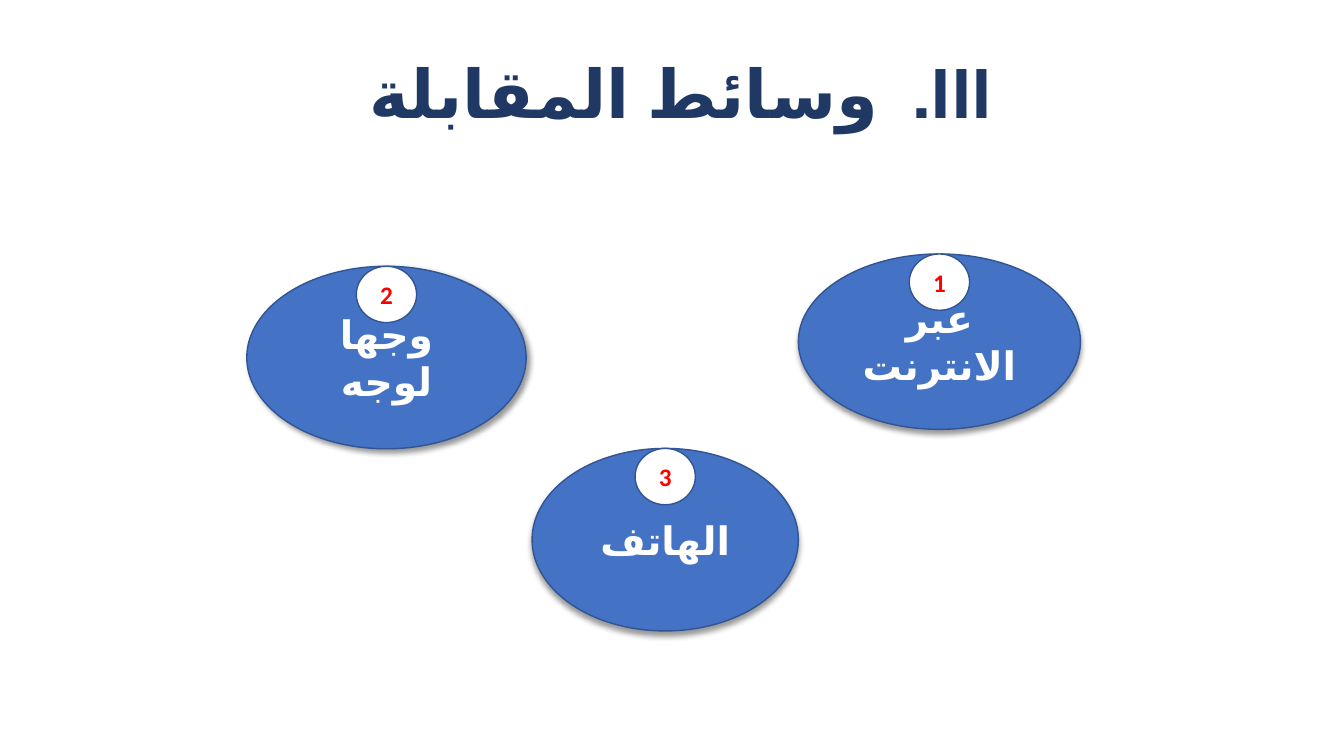
from dataclasses import dataclass

from lxml import etree
from pptx import Presentation
from pptx import util as u
from pptx.dml.color import RGBColor
from pptx.enum import lang, shapes, text
from pptx.oxml import ns


@dataclass(frozen=True)
class Theme:
    font: str = "Calibri"
    title: str = "203864"
    medium: str = "4472C4"
    outline: str = "325491"
    white: str = "FFFFFF"
    number: str = "FF0000"
    shadow: str = "000000"
    title_size: int = 48
    medium_size: int = 28
    number_size: int = 18


THEME = Theme()
BADGE_WIDTH, BADGE_HEIGHT = 1.52, 1.42

# Label, box in cm (left, top, width, height), shadow direction in degrees
MEDIA = [
    ("عبر الانترنت", (20.12, 6.4, 7.11, 4.42), 90),
    ("وجها لوجه", (6.22, 6.71, 7.04, 4.6), 45),
    ("الهاتف", (13.41, 11.3, 6.71, 4.6), 90),
]


def add_element(parent, tag, **attributes):
    child = etree.SubElement(parent, ns.qn(tag))
    for name, value in attributes.items():
        child.set(name, str(value))
    return child


def write(frame, words, size, color):
    """Fill a frame with one centred bold paragraph."""
    frame.word_wrap = True
    frame.vertical_anchor = text.MSO_ANCHOR.MIDDLE
    para = frame.paragraphs[0]
    para.text = words
    para.alignment = text.PP_ALIGN.CENTER
    for span in para.runs:
        span.font.name = THEME.font
        span.font.size = u.Pt(size)
        span.font.bold = True
        span.font.color.rgb = RGBColor.from_string(color)
        span.font.language_id = lang.MSO_LANGUAGE_ID.ARABIC_ALGERIA
    return para


def add_title(page, box):
    """Right-to-left title numbered with a Roman three."""
    title = page.shapes.title
    title.left, title.top, title.width, title.height = map(u.Cm, box)
    frame = title.text_frame
    frame.auto_size = text.MSO_AUTO_SIZE.NONE
    frame.margin_bottom = u.Cm(2)
    para = write(frame, "وسائط المقابلة", THEME.title_size, THEME.title)
    para.line_spacing = 0.9
    settings = para._p.get_or_add_pPr()
    indent = u.Cm(2.86)
    for name, value in (("marL", indent), ("indent", -indent), ("rtl", 1)):
        settings.set(name, str(int(value)))
    add_element(settings, "a:buFont", typeface="+mj-lt")
    add_element(settings, "a:buAutoNum", type="romanUcPeriod", startAt=3)


def add_ellipse(page, box, words, fill, size, color):
    ellipse = page.shapes.add_shape(shapes.MSO_SHAPE.OVAL, *map(u.Cm, box))
    ellipse.fill.solid()
    ellipse.fill.fore_color.rgb = RGBColor.from_string(fill)
    ellipse.line.color.rgb = RGBColor.from_string(THEME.outline)
    ellipse.line.width = u.Pt(1)
    ellipse.shadow.inherit = False
    write(ellipse.text_frame, words, size, color)
    return ellipse


def add_shadow(shape, direction):
    effects = shape._element.spPr.find(ns.qn("a:effectLst"))
    shadow = add_element(effects, "a:outerShdw", blurRad=int(u.Pt(4)),
                         dist=int(u.Pt(3)), dir=direction * 60000,
                         rotWithShape=0)
    shade = add_element(shadow, "a:srgbClr", val=THEME.shadow)
    add_element(shade, "a:alpha", val=40000)


def add_medium(page, box, number, label, direction):
    """Interview medium with its number badge at the top centre."""
    left, top, width, height = box
    ellipse = add_ellipse(page, box, label, THEME.medium,
                          THEME.medium_size, THEME.white)
    add_shadow(ellipse, direction)
    badge_box = (left + (width - BADGE_WIDTH) / 2, top,
                 BADGE_WIDTH, BADGE_HEIGHT)
    add_ellipse(page, badge_box, str(number), THEME.white,
                THEME.number_size, THEME.number)


def main():
    deck = Presentation()
    deck.slide_width, deck.slide_height = u.Cm(33.87), u.Cm(19.05)
    page = deck.slides.add_slide(deck.slide_layouts[5])
    add_title(page, (2.57, 0.97, 29.16, 4.8))
    for number, (label, box, direction) in enumerate(MEDIA, start=1):
        add_medium(page, box, number, label, direction)
    deck.save("out.pptx")


if __name__ == "__main__":
    main()
